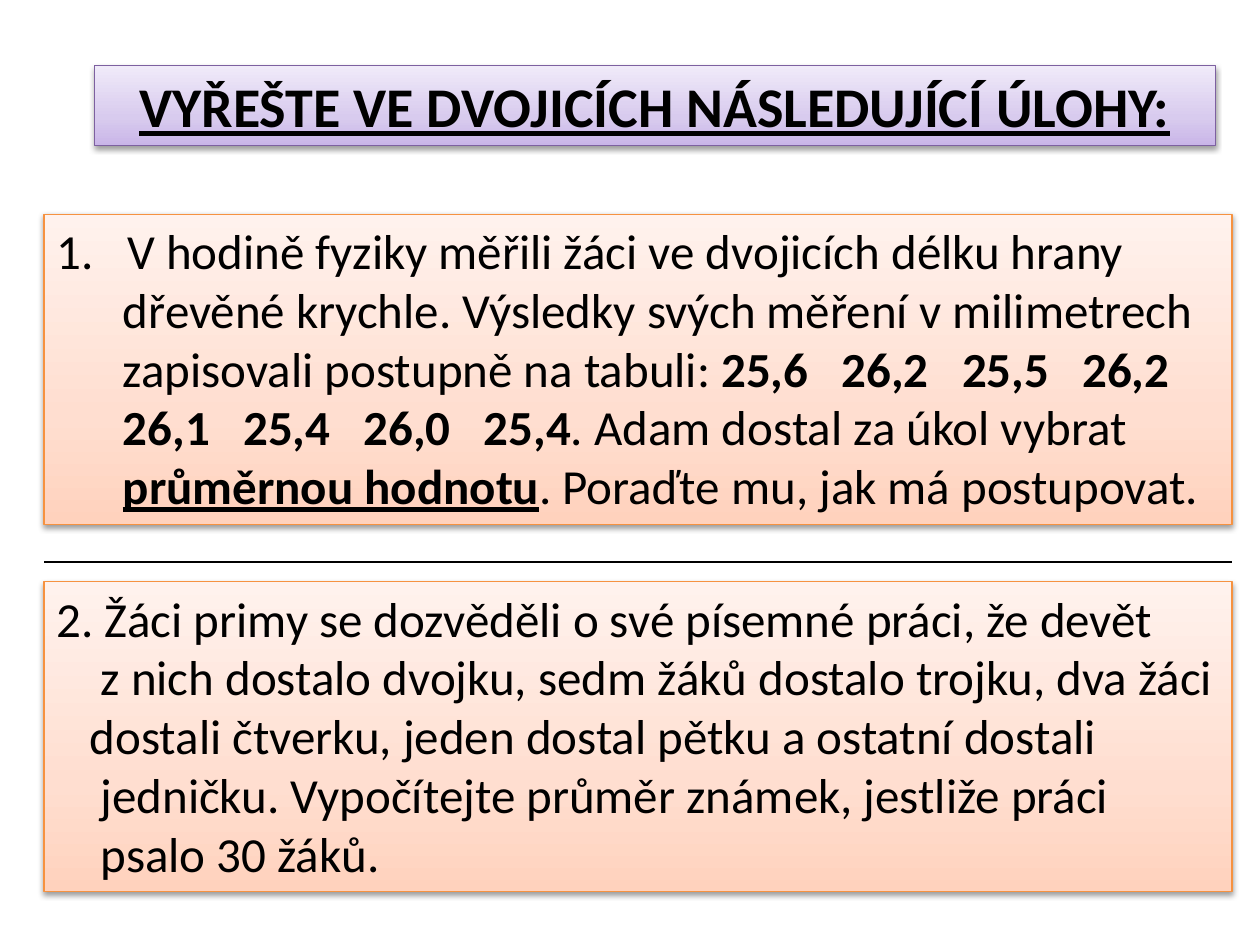
from pptx import Presentation
from pptx.dml.color import RGBColor
from pptx.enum.shapes import MSO_CONNECTOR, MSO_SHAPE
from pptx.enum.text import MSO_ANCHOR, PP_ALIGN
from pptx.oxml import parse_xml
from pptx.oxml.ns import nsdecls
from pptx.oxml.xmlchemy import OxmlElement
from pptx.util import Cm, Pt

THEME = {
    "font": "Calibri",
    "ink": "000000",
    "title_size": 32,
    "task_size": 28,
    "line_width": 0.75,
    "number_gap": 12.7,
    "violet": {"line": "7D60A0", "stops": ((0, "C9B5E8"), (35, "D8CBEE"), (100, "F0EAF9"))},
    "orange": {"line": "F69240", "stops": ((0, "FFD2BD"), (35, "FFDED0"), (100, "FFF2ED"))},
}

HEADING = [{"runs": [("VYŘEŠTE VE DVOJICÍCH NÁSLEDUJÍCÍ ÚLOHY:", "bu")]}]

MEASURING_TASK = [
    {"runs": [("V hodině fyziky měřili žáci ve dvojicích délku hrany", "")],
     "indent": 1.43, "numbered": True},
    {"runs": [("dřevěné krychle. Výsledky svých měření v milimetrech", "")], "indent": 1.34},
    {"runs": [("zapisovali postupně na tabuli: ", "")],
     "values": ["25,6", "26,2", "25,5", "26,2"], "indent": 1.34},
    {"values": ["26,1", "25,4", "26,0", "25,4"],
     "after": [(". Adam dostal za úkol vybrat", "")], "indent": 1.34},
    {"runs": [("průměrnou hodnotu", "bu"), (". Poraďte mu, jak má postupovat.", "")],
     "indent": 1.34},
]

GRADES_TASK = [
    {"runs": [("2. Žáci primy se dozvěděli o své písemné práci, že devět", "")]},
    {"runs": [("z nich dostalo dvojku, sedm žáků dostalo trojku, dva žáci", "")], "indent": 0.89},
    {"runs": [("dostali čtverku, jeden dostal pětku a ostatní dostali", "")], "indent": 0.67},
    {"runs": [("jedničku. Vypočítejte průměr známek, jestliže práci", "")], "indent": 0.89},
    {"runs": [("psalo 30 žáků.", "")], "indent": 0.89},
]

TASK_LEFT, TASK_WIDTH, TASK_HEIGHT = 0.89, 23.95, 6.25
DIVIDER_TOP = 11.33
PANELS = [
    (HEADING, (1.9, 1.32, 22.61, 1.62), "violet", "title_size", PP_ALIGN.CENTER),
    (MEASURING_TASK, (TASK_LEFT, 4.32, TASK_WIDTH, TASK_HEIGHT), "orange", "task_size", PP_ALIGN.LEFT),
    (GRADES_TASK, (TASK_LEFT, 11.73, TASK_WIDTH, TASK_HEIGHT), "orange", "task_size", PP_ALIGN.LEFT),
]


def add_run(paragraph, words, style, size):
    run = paragraph.add_run()
    run.text = words
    run.font.name = THEME["font"]
    run.font.size = Pt(size)
    run.font.bold = "b" in style
    run.font.underline = "u" in style
    run.font.color.rgb = RGBColor.from_string(THEME["ink"])
    return run


def add_values(paragraph, values, size):
    for position, value in enumerate(values):
        if position:
            gap = add_run(paragraph, " ", "b", size)
            gap.font._element.set("spc", str(round(THEME["number_gap"] * 100)))
        add_run(paragraph, value, "b", size)


def write_line(paragraph, line, size, alignment):
    paragraph.alignment = alignment
    properties = paragraph._p.get_or_add_pPr()
    indent = Cm(line.get("indent", 0))
    numbered = line.get("numbered", False)
    properties.set("marL", str(indent))
    properties.set("indent", str(-indent if numbered else 0))
    if numbered:
        numbering = OxmlElement("a:buAutoNum")
        numbering.set("type", "arabicPeriod")
        properties.append(numbering)
    for words, style in line.get("runs", []):
        add_run(paragraph, words, style, size)
    add_values(paragraph, line.get("values", []), size)
    for words, style in line.get("after", []):
        add_run(paragraph, words, style, size)


def paint(panel, colours):
    panel.line.color.rgb = RGBColor.from_string(colours["line"])
    panel.line.width = Pt(THEME["line_width"])
    stops = "".join(
        f'<a:gs pos="{share * 1000}"><a:srgbClr val="{colour}"/></a:gs>'
        for share, colour in colours["stops"]
    )
    properties = panel._element.spPr
    properties.insert(2, parse_xml(
        f'<a:gradFill {nsdecls("a")} rotWithShape="1"><a:gsLst>{stops}</a:gsLst>'
        '<a:lin ang="16200000" scaled="0"/></a:gradFill>'
    ))
    properties.append(parse_xml(
        f'<a:effectLst {nsdecls("a")}><a:outerShdw blurRad="40000" dist="20000" '
        f'dir="5400000" rotWithShape="0"><a:srgbClr val="{THEME["ink"]}">'
        '<a:alpha val="38000"/></a:srgbClr></a:outerShdw></a:effectLst>'
    ))


def add_panel(slide, lines, place, palette, size_name, alignment):
    panel = slide.shapes.add_shape(MSO_SHAPE.RECTANGLE, *map(Cm, place))
    paint(panel, THEME[palette])
    frame = panel.text_frame
    frame.word_wrap = True
    frame.vertical_anchor = MSO_ANCHOR.TOP
    for position, line in enumerate(lines):
        paragraph = frame.add_paragraph() if position else frame.paragraphs[0]
        write_line(paragraph, line, THEME[size_name], alignment)


def add_divider(slide):
    divider = slide.shapes.add_connector(
        MSO_CONNECTOR.STRAIGHT,
        Cm(TASK_LEFT), Cm(DIVIDER_TOP), Cm(TASK_LEFT + TASK_WIDTH), Cm(DIVIDER_TOP),
    )
    divider.line.color.rgb = RGBColor.from_string(THEME["ink"])
    divider.line.width = Pt(THEME["line_width"])
    divider._element.spPr.append(OxmlElement("a:effectLst"))


def main():
    presentation = Presentation()
    presentation.slide_width, presentation.slide_height = Cm(25.4), Cm(19.05)
    slide = presentation.slides.add_slide(presentation.slide_layouts[6])
    for panel in PANELS:
        add_panel(slide, *panel)
    add_divider(slide)
    presentation.save("out.pptx")


if __name__ == "__main__":
    main()
